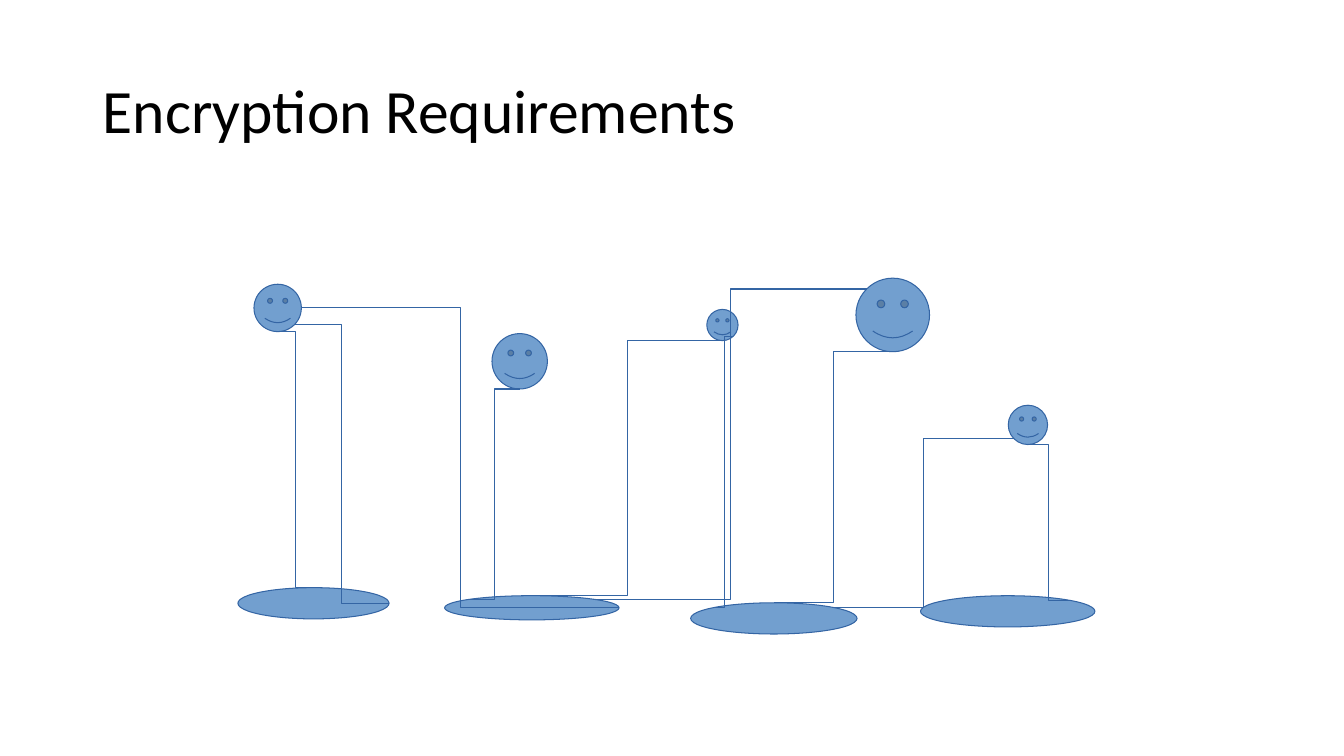
from math import cos, radians, sin

from lxml import etree
from pptx import Presentation
from pptx.dml.color import RGBColor
from pptx.enum.shapes import MSO_CONNECTOR, MSO_SHAPE
from pptx.enum.text import MSO_ANCHOR
from pptx.oxml.ns import qn
from pptx.util import Inches, Pt

ELLIPSE = MSO_SHAPE.OVAL
FACE = MSO_SHAPE.SMILEY_FACE
ELBOW = MSO_CONNECTOR.ELBOW
MIDDLE = MSO_ANCHOR.MIDDLE

WIDTH, HEIGHT = Inches(13.33), Inches(7.5)
COLORS = {"fill": "729FCF", "line": "3465A4", "text": "000000"}
ANGLES = {
    "right": 0, "bottom right": 45, "bottom": 90, "bottom left": 135,
    "top left": 225, "top": 270, "top right": 315,
}

DISCS = [
    (17.7, 77.73, 11.25, 4.13),
    (33.08, 78.8, 12.98, 3.2),
    (51.39, 79.73, 12.38, 4.13),
    (68.49, 78.8, 12.98, 4.13),
]
FACES = [
    (18.9, 37.6, 6.27),
    (36.61, 44.13, 7.33),
    (52.59, 40.93, 4.13),
    (63.69, 36.8, 9.73),
    (75.02, 53.6, 5.2),
]
LINKS = [
    (0, "bottom", 0, "top"),
    (0, "bottom right", 0, "right"),
    (0, "right", 1, "right"),
    (1, "bottom", 1, "top left"),
    (2, "bottom", 1, "top"),
    (2, "bottom right", 2, "top left"),
    (3, "bottom", 2, "top"),
    (3, "top left", 1, "top right"),
    (4, "bottom left", 2, "top right"),
    (4, "bottom", 3, "top right"),
]


def across(percent):
    """Return a share of the slide's width."""
    return round(WIDTH * percent / 100)


def down(percent):
    """Return a share of the slide's height."""
    return round(HEIGHT * percent / 100)


def color(name):
    """Return a named colour."""
    return RGBColor.from_string(COLORS[name])


def style_line(line):
    """Give an outline or connector its colour and width."""
    line.color.rgb = color("line")
    line.width = Pt(0.75)


def add_title(page, words):
    """Add the slide heading."""
    box = page.shapes.add_textbox(across(6.9), down(5.33), across(86.27), down(19.33))
    frame = box.text_frame
    frame.word_wrap = True
    frame.vertical_anchor = MIDDLE
    para = frame.paragraphs[0]
    para.text = words
    para.line_spacing = 0.9
    para.font.name = "Calibri"
    para.font.size = Pt(44)
    para.font.color.rgb = color("text")


def add_figure(page, kind, left, top, width, height):
    """Add a filled and outlined shape."""
    shape = page.shapes.add_shape(kind, left, top, width, height)
    shape.shadow.inherit = False
    shape.fill.solid()
    shape.fill.fore_color.rgb = color("fill")
    style_line(shape.line)
    return shape


def rim_point(shape, side):
    """Return the point on a round shape's rim at a named side."""
    angle = radians(ANGLES[side])
    x = shape.left + shape.width * (1 + cos(angle)) / 2
    y = shape.top + shape.height * (1 + sin(angle)) / 2
    return round(x), round(y)


def add_link(page, start, end):
    """Add an elbow connector between two points."""
    link = page.shapes.add_connector(ELBOW, *start, *end)
    style_line(link.line)
    etree.SubElement(link._element.spPr, qn("a:effectLst"))


def main():
    """Build and save the slide."""
    deck = Presentation()
    deck.slide_width, deck.slide_height = WIDTH, HEIGHT
    page = deck.slides.add_slide(deck.slide_layouts[6])
    add_title(page, "Encryption Requirements")
    discs = [
        add_figure(page, ELLIPSE, across(left), down(top), across(width), down(height))
        for left, top, width, height in DISCS
    ]
    faces = [
        add_figure(page, FACE, across(left), down(top), down(size), down(size))
        for left, top, size in FACES
    ]
    for face, face_side, disc, disc_side in LINKS:
        add_link(page, rim_point(faces[face], face_side), rim_point(discs[disc], disc_side))
    deck.save("out.pptx")


if __name__ == "__main__":
    main()
